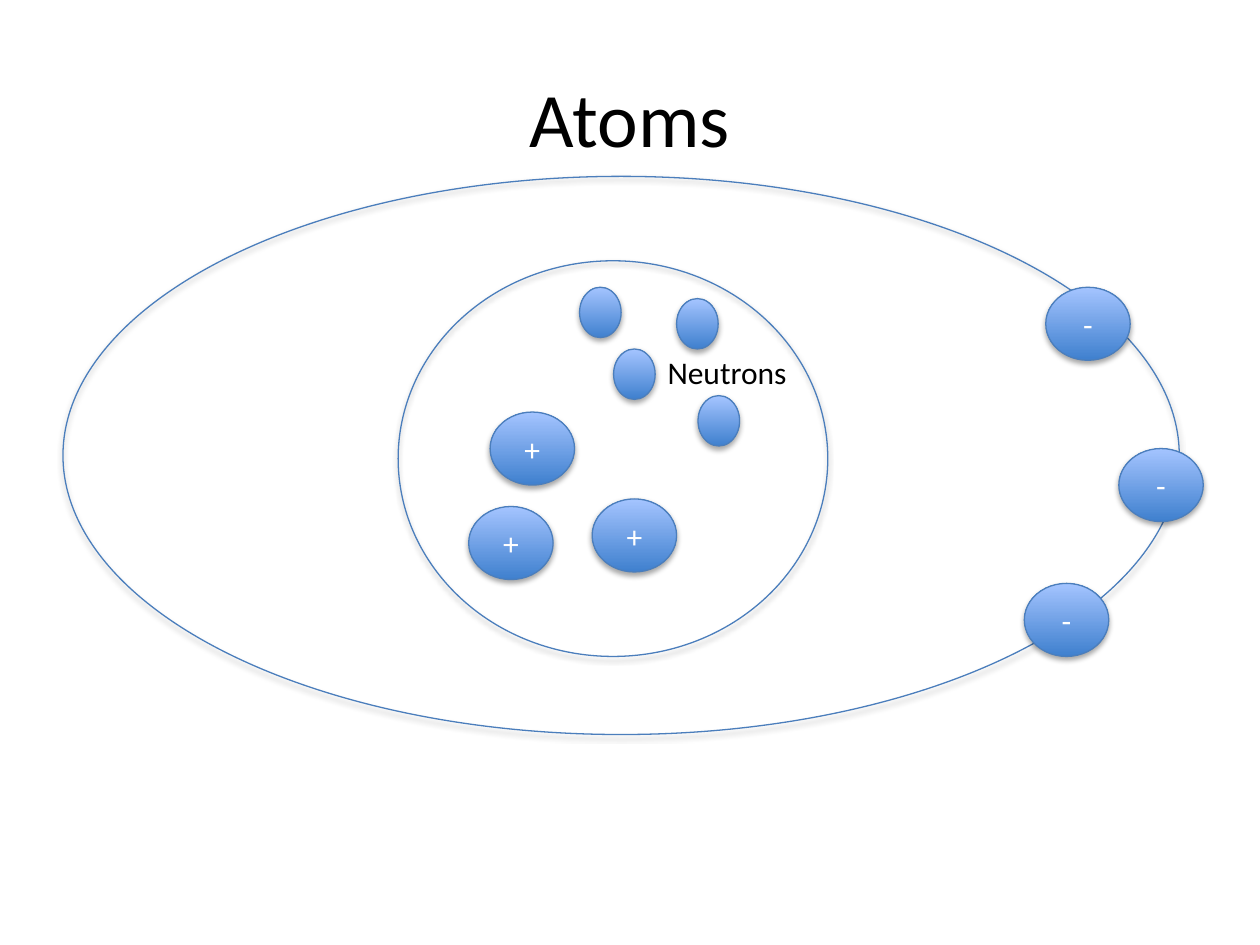
from lxml.etree import SubElement as Sub
from pptx import Presentation
from pptx.dml.color import RGBColor as RGB
from pptx.enum.shapes import MSO_SHAPE as Shape
from pptx.enum.text import MSO_ANCHOR as Anchor, MSO_AUTO_SIZE as Auto, PP_ALIGN as Align
from pptx.oxml.ns import qn
from pptx.util import Inches, Pt

HUE = {"ink": "000000", "white": "FFFFFF", "line": "4B7EBC", "dark": "3F80CE", "light": "A4C4FF"}
FONT = "Calibri"

TITLE = ("Atoms", (0.5, 0.3, 9, 1.25))
LABEL = ("Neutrons", (5.2, 2.75, 1.16, 0.4))
NUCLEUS = (3.16, 2.07, 3.41, 3.14)
ORBIT = (0.5, 1.4, 8.86, 4.43)
CHARGE = (0.67, 0.58)
NEUTRAL = (0.33, 0.4)
GROUPS = [
    ("+", CHARGE, [(3.89, 3.27), (4.7, 3.96), (3.72, 4.02)]),
    ("-", CHARGE, [(8.3, 2.28), (8.88, 3.56), (8.13, 4.63)]),
    ("", NEUTRAL, [(5.37, 2.37), (5.54, 3.14), (4.87, 2.77), (4.6, 2.28)]),
]


def color(name):
    return RGB.from_string(HUE[name])


def write(frame, text, size=18, hue="ink", align=Align.CENTER, anchor=Anchor.MIDDLE, wrap=True):
    frame.word_wrap = wrap
    frame.vertical_anchor = anchor
    para = frame.paragraphs[0]
    para.alignment = align
    run = para.add_run()
    run.text = text
    run.font.size = Pt(size)
    run.font.name = FONT
    run.font.color.rgb = color(hue)


def shade(shape):
    shape.shadow.inherit = False
    effect = shape._element.spPr.find(qn("a:effectLst"))
    outer = Sub(effect, qn("a:outerShdw"), blurRad="40000", dist="23000", dir="5400000", rotWithShape="0")
    black = Sub(outer, qn("a:srgbClr"), val=HUE["ink"])
    Sub(black, qn("a:alpha"), val="35000")


def oval(slide, box, solid=False):
    shape = slide.shapes.add_shape(Shape.OVAL, *map(Inches, box))
    if solid:
        shape.fill.gradient()
        shape.fill.gradient_angle = 90
        for stop, name in zip(shape.fill.gradient_stops, ("dark", "light")):
            stop.color.rgb = color(name)
    else:
        shape.fill.background()
    shape.line.color.rgb = color("line")
    shape.line.width = Pt(0.75)
    shade(shape)
    return shape


def main():
    deck = Presentation()
    deck.slide_width, deck.slide_height = Inches(10), Inches(7.5)
    slide = deck.slides.add_slide(deck.slide_layouts[5])

    text, box = TITLE
    title = slide.shapes.title
    title.left, title.top, title.width, title.height = map(Inches, box)
    write(title.text_frame, text, size=44)

    oval(slide, NUCLEUS)
    oval(slide, ORBIT)

    text, box = LABEL
    label = slide.shapes.add_textbox(*map(Inches, box)).text_frame
    write(label, text, align=Align.LEFT, anchor=Anchor.TOP, wrap=False)
    label.auto_size = Auto.SHAPE_TO_FIT_TEXT

    for sign, size, spots in GROUPS:
        for spot in spots:
            ball = oval(slide, spot + size, solid=True)
            if sign:
                write(ball.text_frame, sign, hue="white")

    deck.save("out.pptx")


if __name__ == "__main__":
    main()
